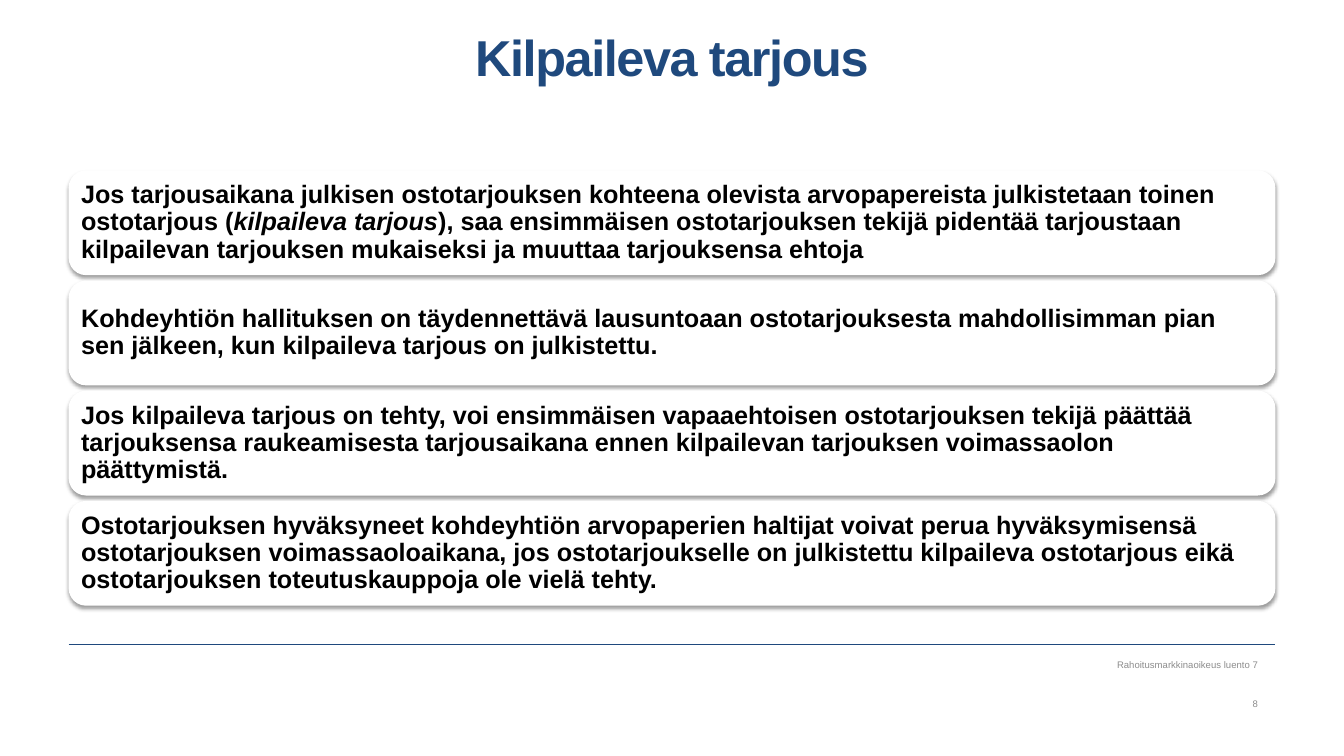
from dataclasses import dataclass

from lxml import etree
from pptx import Presentation
from pptx.dml.color import RGBColor
from pptx.enum import shapes, text
from pptx.oxml import ns
from pptx.slide import Slide
from pptx.text.text import TextFrame
from pptx.util import Pt


@dataclass(frozen=True)
class Theme:
    font: str = "Arial"
    navy: RGBColor = RGBColor(0x1F, 0x49, 0x7D)
    ink: RGBColor = RGBColor(0, 0, 0)
    paper: RGBColor = RGBColor(0xFF, 0xFF, 0xFF)
    grey: RGBColor = RGBColor(0x8C, 0x8C, 0x8C)
    title_size: float = 36
    body_size: float = 18
    footer_size: float = 6.8


@dataclass(frozen=True)
class Span:
    words: str
    italic: bool = False


@dataclass(frozen=True)
class FooterLine:
    words: str
    top: float


THEME = Theme()
LEFT, WIDTH = 49, 862
CARD_TOP, CARD_HEIGHT, CARD_PITCH = 121.7, 74.9, 78.7
TITLE = "Kilpaileva tarjous"
CARDS: list[list[Span]] = [
    [
        Span("Jos tarjousaikana julkisen ostotarjouksen kohteena olevista arvopapereista "
             "julkistetaan toinen ostotarjous ("),
        Span("kilpaileva tarjous", italic=True),
        Span("), saa ensimmäisen ostotarjouksen tekijä pidentää tarjoustaan kilpailevan "
             "tarjouksen mukaiseksi ja muuttaa tarjouksensa ehtoja"),
    ],
    [Span("Kohdeyhtiön hallituksen on täydennettävä lausuntoaan ostotarjouksesta "
          "mahdollisimman pian sen jälkeen, kun kilpaileva tarjous on julkistettu.")],
    [Span("Jos kilpaileva tarjous on tehty, voi ensimmäisen vapaaehtoisen ostotarjouksen "
          "tekijä päättää tarjouksensa raukeamisesta tarjousaikana ennen kilpailevan "
          "tarjouksen voimassaolon päättymistä.")],
    [Span("Ostotarjouksen hyväksyneet kohdeyhtiön arvopaperien haltijat voivat perua "
          "hyväksymisensä ostotarjouksen voimassaoloaikana, jos ostotarjoukselle on "
          "julkistettu kilpaileva ostotarjous eikä ostotarjouksen toteutuskauppoja ole "
          "vielä tehty.")],
]
FOOTER = [FooterLine("Rahoitusmarkkinaoikeus luento 7", 468.7), FooterLine("8", 496.1)]


def set_text(frame: TextFrame, spans: list[Span], size: float, color: RGBColor, bold: bool,
             align: text.PP_ALIGN, anchor: text.MSO_ANCHOR, margins: tuple[float, ...],
             line_spacing: float = 1) -> None:
    """Fill a frame with one paragraph; margins run left, top, right, bottom."""
    frame.word_wrap = True
    frame.auto_size = text.MSO_AUTO_SIZE.NONE
    frame.vertical_anchor = anchor
    frame.margin_left, frame.margin_top, frame.margin_right, frame.margin_bottom = map(Pt, margins)
    para = frame.paragraphs[0]
    para.alignment = align
    para.line_spacing = line_spacing
    para.font.name = THEME.font
    para.font.size = Pt(size)
    para.font.bold = bold
    para.font.color.rgb = color
    for span in spans:
        run = para.add_run()
        run.text = span.words
        if span.italic:
            run.font.italic = True


def add_title(page: Slide) -> None:
    title = page.shapes.title
    title.left, title.top, title.width, title.height = Pt(LEFT), Pt(25.2), Pt(WIDTH), Pt(94.3)
    set_text(title.text_frame, [Span(TITLE)], THEME.title_size, THEME.navy, True,
             text.PP_ALIGN.CENTER, text.MSO_ANCHOR.TOP, (0, 0, 0, 0), 0.85)
    # Letter spacing in hundredths of a point
    title.text_frame.paragraphs[0].runs[0].font._element.set("spc", "-100")


def add_card(page: Slide, top: float, spans: list[Span]) -> None:
    card = page.shapes.add_shape(shapes.MSO_SHAPE.ROUNDED_RECTANGLE,
                                 Pt(LEFT), Pt(top), Pt(WIDTH), Pt(CARD_HEIGHT))
    card.fill.solid()
    card.fill.fore_color.rgb = THEME.paper
    card.line.fill.background()
    card.shadow.inherit = False
    effects = card._element.spPr.find(ns.qn("a:effectLst"))
    shadow = etree.SubElement(effects, ns.qn("a:outerShdw"), blurRad=str(Pt(3.1)),
                              dist=str(Pt(1.6)), dir="5400000", rotWithShape="0")
    color = etree.SubElement(shadow, ns.qn("a:srgbClr"), val=str(THEME.ink))
    etree.SubElement(color, ns.qn("a:alpha"), val="38000")
    # The preset's rounded corners already inset its text by about 3.66 pt
    set_text(card.text_frame, spans, THEME.body_size, THEME.ink, True,
             text.PP_ALIGN.LEFT, text.MSO_ANCHOR.MIDDLE, (5.3, 5.3, 5.3, 5.3), 0.9)


def add_rule(page: Slide) -> None:
    rule = page.shapes.add_connector(shapes.MSO_CONNECTOR.STRAIGHT,
                                     Pt(LEFT), Pt(460.6), Pt(LEFT + WIDTH), Pt(460.6))
    rule.line.color.rgb = THEME.navy
    rule.line.width = Pt(1)
    etree.SubElement(rule._element.spPr, ns.qn("a:effectLst"))


def add_footer_line(page: Slide, line: FooterLine) -> None:
    box = page.shapes.add_textbox(Pt(518.4), Pt(line.top), Pt(380.2), Pt(12.6))
    set_text(box.text_frame, [Span(line.words)], THEME.footer_size, THEME.grey, False,
             text.PP_ALIGN.RIGHT, text.MSO_ANCHOR.MIDDLE, (7.2, 3.6, 0, 3.6))


def main() -> None:
    deck = Presentation()
    deck.slide_width, deck.slide_height = Pt(960), Pt(540)
    page = deck.slides.add_slide(deck.slide_layouts.get_by_name("Title Only"))
    add_rule(page)
    add_title(page)
    for index, spans in enumerate(CARDS):
        add_card(page, CARD_TOP + index * CARD_PITCH, spans)
    for line in FOOTER:
        add_footer_line(page, line)
    deck.save("out.pptx")


if __name__ == "__main__":
    main()
